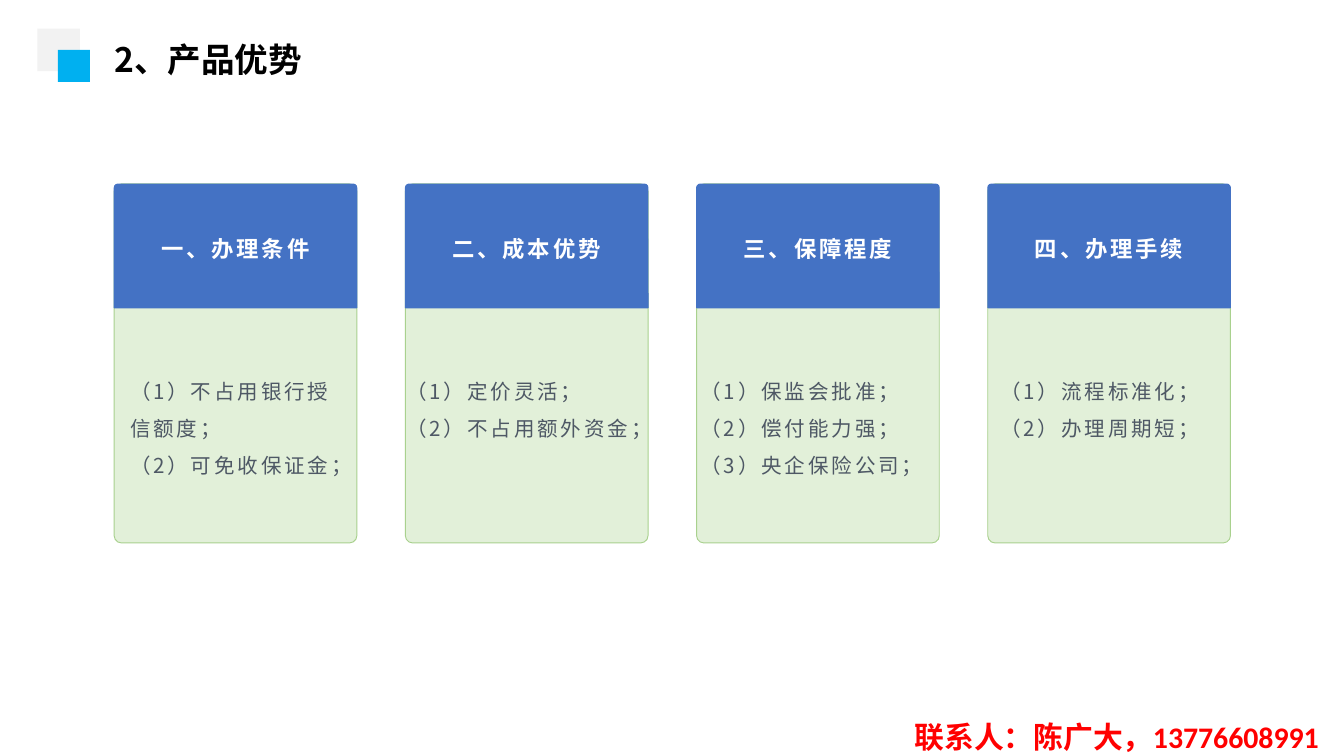
from lxml import etree
from pptx import Presentation
from pptx.dml.color import RGBColor
from pptx.enum.shapes import MSO_SHAPE
from pptx.enum.text import MSO_ANCHOR, MSO_AUTO_SIZE, PP_ALIGN
from pptx.oxml.ns import qn
from pptx.util import Pt

CJK_FONT = "Noto Sans CJK SC"
TITLE = {"name": CJK_FONT, "size": Pt(18), "bold": True, "color": "000000"}
HEADING = {"name": "Arial", "size": Pt(12), "bold": True, "color": "FFFFFF", "tracking": 150}
BODY = {"name": CJK_FONT, "size": Pt(11), "color": "4E5865", "tracking": 150}
CONTACT = {"name": "Calibri", "size": Pt(16), "bold": True, "color": "FF0000"}

CARD_LEFT, CARD_TOP, CARD_WIDTH, CARD_HEIGHT = 61.2, 98.6, 130, 192.3
CARD_PITCH = 156
HEADER_HEIGHT = 66.3

# Heading, body offset from the card's left edge, body width, points
CARDS = [
    ("一、办理条件", 1.4, 126.7, ["（1）不占用银行授信额度；", "（2）可免收保证金；"]),
    ("二、成本优势", -6.6, 144, ["（1）定价灵活；", "（2）不占用额外资金；"]),
    ("三、保障程度", -5, 131.8,
     ["（1）保监会批准；", "（2）偿付能力强；", "（3）央企保险公司；"]),
    ("四、办理手续", -0.4, 118.8, ["（1）流程标准化；", "（2）办理周期短；"]),
]


def color(value):
    return RGBColor.from_string(value)


def fill_text(shape, lines, style, align=PP_ALIGN.LEFT, spacing=1.0, anchor=MSO_ANCHOR.TOP):
    frame = shape.text_frame
    frame.word_wrap = True
    frame.auto_size = MSO_AUTO_SIZE.NONE
    frame.vertical_anchor = anchor
    for index, line in enumerate(lines):
        paragraph = frame.paragraphs[0] if index == 0 else frame.add_paragraph()
        paragraph.alignment = align
        paragraph.line_spacing = spacing
        run = paragraph.add_run()
        run.text = line
        for key, value in style.items():
            if key == "color":
                run.font.color.rgb = color(value)
            elif key == "tracking":
                run._r.get_or_add_rPr().set("spc", str(value))
            else:
                setattr(run.font, key, value)
        etree.SubElement(run._r.get_or_add_rPr(), qn("a:ea"), typeface=CJK_FONT)


def add_text(slide, left, top, width, height, lines, style, **layout):
    box = slide.shapes.add_textbox(Pt(left), Pt(top), Pt(width), Pt(height))
    fill_text(box, lines, style, **layout)


def add_block(slide, kind, left, top, width, height, fill, line=None, radius=None):
    shape = slide.shapes.add_shape(kind, Pt(left), Pt(top), Pt(width), Pt(height))
    shape.shadow.inherit = False
    shape.fill.solid()
    shape.fill.fore_color.rgb = color(fill)
    if line:
        shape.line.color.rgb = color(line)
        shape.line.width = Pt(0.5)
    else:
        shape.line.fill.background()
    if radius:
        shape.adjustments[0] = radius


def add_title(slide, left, top):
    """Place the title and the two overlapping squares before it."""
    title = slide.shapes.title
    title.left, title.top = Pt(left + 34), Pt(top + 2)
    title.width, title.height = Pt(289.4), Pt(29)
    fill_text(title, ["2、产品优势"], TITLE)
    add_block(slide, MSO_SHAPE.RECTANGLE, left, top, 22.8, 22.8, "F2F2F2")
    add_block(slide, MSO_SHAPE.RECTANGLE, left + 11, top + 11.4, 17.2, 17.2, "00B0F0")


def add_card(slide, left, top, width, height, heading, offset, body_width, points):
    add_block(slide, MSO_SHAPE.ROUNDED_RECTANGLE, left, top, width, height,
              "E2F0D9", "A9D18E", 0.03)
    add_block(slide, MSO_SHAPE.ROUND_2_SAME_RECTANGLE, left, top, width, HEADER_HEIGHT,
              "4472C4", "4472C4", 0.03)
    add_text(slide, left, top + 23.8, width, 21.6, [heading], HEADING, align=PP_ALIGN.CENTER)
    add_text(slide, left + offset, top + 94.4, body_width, 7.2 + 20 * len(points),
             points, BODY, spacing=1.5)


def main():
    presentation = Presentation()
    presentation.slide_width, presentation.slide_height = Pt(720), Pt(405)
    slide = presentation.slides.add_slide(presentation.slide_layouts[5])
    add_title(slide, 20, 15.3)
    for index, card in enumerate(CARDS):
        add_card(slide, CARD_LEFT + index * CARD_PITCH, CARD_TOP, CARD_WIDTH, CARD_HEIGHT, *card)
    add_text(slide, 476.6, 383.8, 243.4, 21.6, ["联系人：陈广大，13776608991"], CONTACT,
             align=PP_ALIGN.CENTER, anchor=MSO_ANCHOR.MIDDLE)
    presentation.save("out.pptx")


if __name__ == "__main__":
    main()
